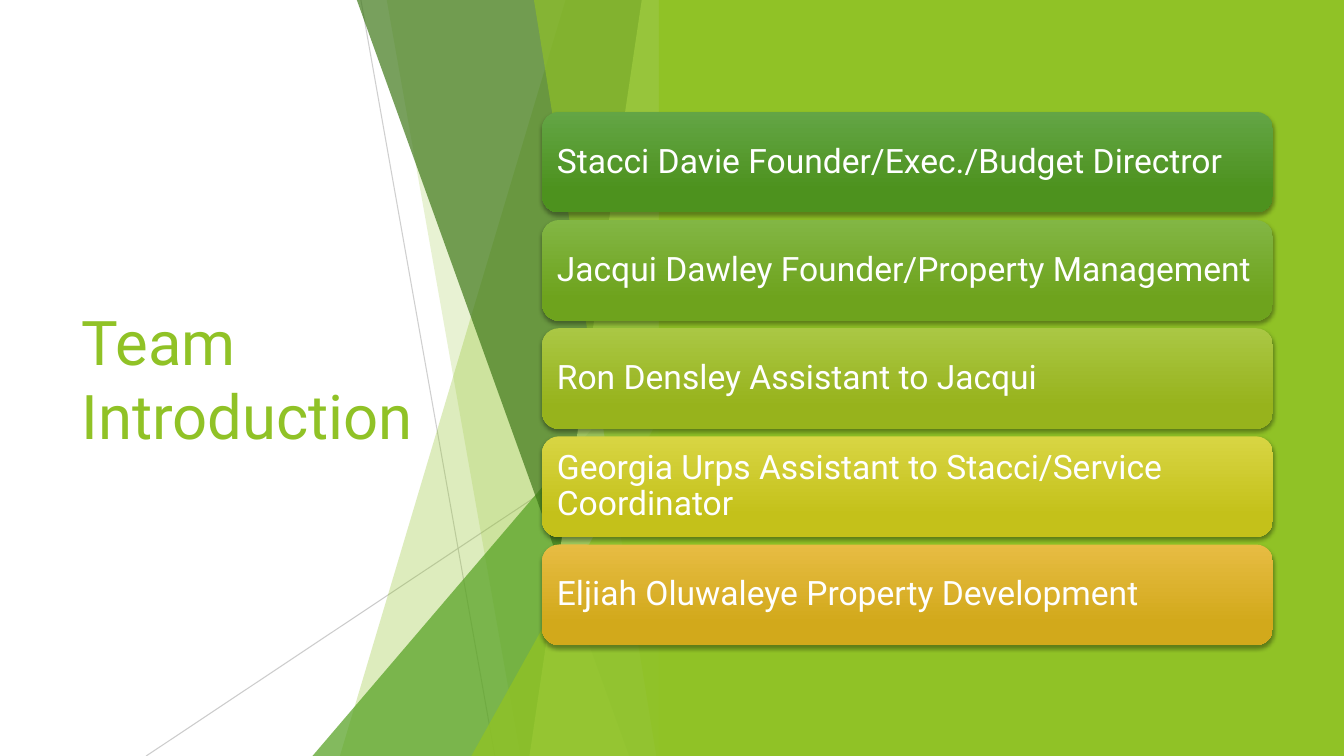
import pptx
import pptx.util
import pptx.dml.color
import pptx.enum.shapes
import pptx.enum.text
import pptx.oxml
import pptx.oxml.ns

Pt = pptx.util.Pt
KINDS = pptx.enum.shapes.MSO_SHAPE
ANCHOR = pptx.enum.text.MSO_ANCHOR.MIDDLE
LEFT = pptx.enum.text.PP_ALIGN.LEFT
WIDE, HIGH = 960, 540
LIME = "90C226"

# top x, foot x, top y, colour, opacity
FACETS = [
    (404, 242.8, 0, LIME, 30),
    (276.3, 371.7, 0, LIME, 20),
    (479.7, 223.2, 239.8, "54A021", 72),
    (254.9, 449.4, 0, "3F7819", 70),
    (458.4, 378.2, 0, "C0E474", 70),
    (381.4, 468.8, 0, LIME, 65),
    (479.7, 336.7, 283, LIME, 80),
]
RAYS = [(257.8, 0, 353.5, HIGH, 75), (479.7, 290.2, 104.4, HIGH, 80)]
TEAM = [
    ("Stacci Davie Founder/Exec./Budget Directror", "63A545", "4D921E"),
    ("Jacqui Dawley Founder/Property Management", "82B644", "6EA31D"),
    ("Ron Densley Assistant to Jacqui", "AAC744", "97B31C"),
    ("Georgia Urps Assistant to Stacci/Service Coordinator", "D8D543", "C4C11A"),
    ("Eljiah Oluwaleye Property Development", "E7BC43", "D2A91B"),
]


def tint(code):
    return pptx.dml.color.RGBColor.from_string(code)


def apply(item, values):
    for name, value in values.items():
        setattr(item, name, value)


def place(item, x, y, w, h):
    apply(item, {"left": Pt(x), "top": Pt(y), "width": Pt(w), "height": Pt(h)})


def append(item, tag, **values):
    node = pptx.oxml.parse_xml(f"<a:{tag} {pptx.oxml.ns.nsdecls('a')}/>")
    for name, value in values.items():
        node.set(name, str(value))
    item.append(node)
    return node


def fade(item, part):
    code = item.element.spPr.find(".//" + pptx.oxml.ns.qn("a:srgbClr"))
    append(code, "alpha", val=part * 1000)


def paint(shape, code):
    shape.fill.solid()
    shape.fill.fore_color.rgb = tint(code)
    shape.line.fill.background()
    shape.shadow.inherit = False


def write(frame, text, size, code, space):
    apply(frame, {"word_wrap": True, "vertical_anchor": ANCHOR,
                  "auto_size": pptx.enum.text.MSO_AUTO_SIZE.NONE})
    frame.text = text
    par = frame.paragraphs[0]
    apply(par, {"alignment": LEFT, "line_spacing": space})
    font = par.runs[0].font
    apply(font, {"name": "Roboto", "size": Pt(size)})
    font.color.rgb = tint(code)


def add_title(slide, x, y, w, h):
    title = slide.shapes.title
    place(title, x, y, w, h)
    write(title.text_frame, "Team Introduction", 44, LIME, 1.0)


def add_rays(slide, x, y):
    for x1, y1, x2, y2, part in RAYS:
        ray = slide.shapes.add_connector(
            pptx.enum.shapes.MSO_CONNECTOR.STRAIGHT,
            Pt(x + x1), Pt(y + y1), Pt(x + x2), Pt(y + y2))
        ray.line.color.rgb = tint("BFBFBF")
        ray.line.width = Pt(0.75)
        fade(ray, part)
        append(ray.element.spPr, "effectLst")


def add_facets(slide, x, y, w, h):
    for head, foot, top, code, part in FACETS:
        if top:
            facet = slide.shapes.add_shape(
                KINDS.ISOSCELES_TRIANGLE,
                Pt(x + foot), Pt(y + top), Pt(w - foot), Pt(h - top))
            facet.adjustments[0] = 1
        else:
            pen = slide.shapes.build_freeform(Pt(x + head), Pt(y))
            pen.add_line_segments([(Pt(x + w), Pt(y)), (Pt(x + w), Pt(y + h)),
                                   (Pt(x + foot), Pt(y + h))], close=True)
            facet = pen.convert_to_shape()
        paint(facet, code)
        fade(facet, part)


def add_panel(slide, x, y, w, h):
    panel = slide.shapes.add_shape(KINDS.RECTANGLE, Pt(x), Pt(y), Pt(w), Pt(h))
    paint(panel, LIME)


def add_card(slide, x, y, w, h, text, light, dark):
    card = slide.shapes.add_shape(
        KINDS.ROUNDED_RECTANGLE, Pt(x), Pt(y), Pt(w), Pt(h))
    paint(card, dark)
    card.fill.gradient()
    card.fill.gradient_angle = 270
    for stop, code, spot in zip(card.fill.gradient_stops, (light, dark), (0, 0.78)):
        stop.color.rgb = tint(code)
        stop.position = spot
    glow = card.element.spPr.find(pptx.oxml.ns.qn("a:effectLst"))
    shade = append(glow, "outerShdw", blurRad=Pt(3), dist=Pt(2), dir=5400000,
                   algn="ctr", rotWithShape=0)
    append(append(shade, "srgbClr", val="000000"), "alpha", val=35000)
    sides = ("left", "top", "right", "bottom")
    apply(card.text_frame, {f"margin_{side}": Pt(7.2) for side in sides})
    write(card.text_frame, text, 24, "FFFFFF", 0.9)


def add_team(slide, x, y, w, h):
    gap = 5.4
    tall = (h - gap * (len(TEAM) - 1)) / len(TEAM)
    for row, member in enumerate(TEAM):
        add_card(slide, x, y + row * (tall + gap), w, tall, *member)


def main():
    deck = pptx.Presentation()
    apply(deck, {"slide_width": Pt(WIDE), "slide_height": Pt(HIGH)})
    slide = deck.slides.add_slide(deck.slide_layouts[5])
    add_title(slide, 51.1, 108.7, 279.4, 322.6)
    add_rays(slide, 0, 0)
    add_facets(slide, 0, 0, 479.7, HIGH)
    add_panel(slide, 470.6, 0, WIDE - 470.6, HIGH)
    add_team(slide, 387.2, 79.9, 522, 380.9)
    deck.save("out.pptx")


if __name__ == "__main__":
    main()
